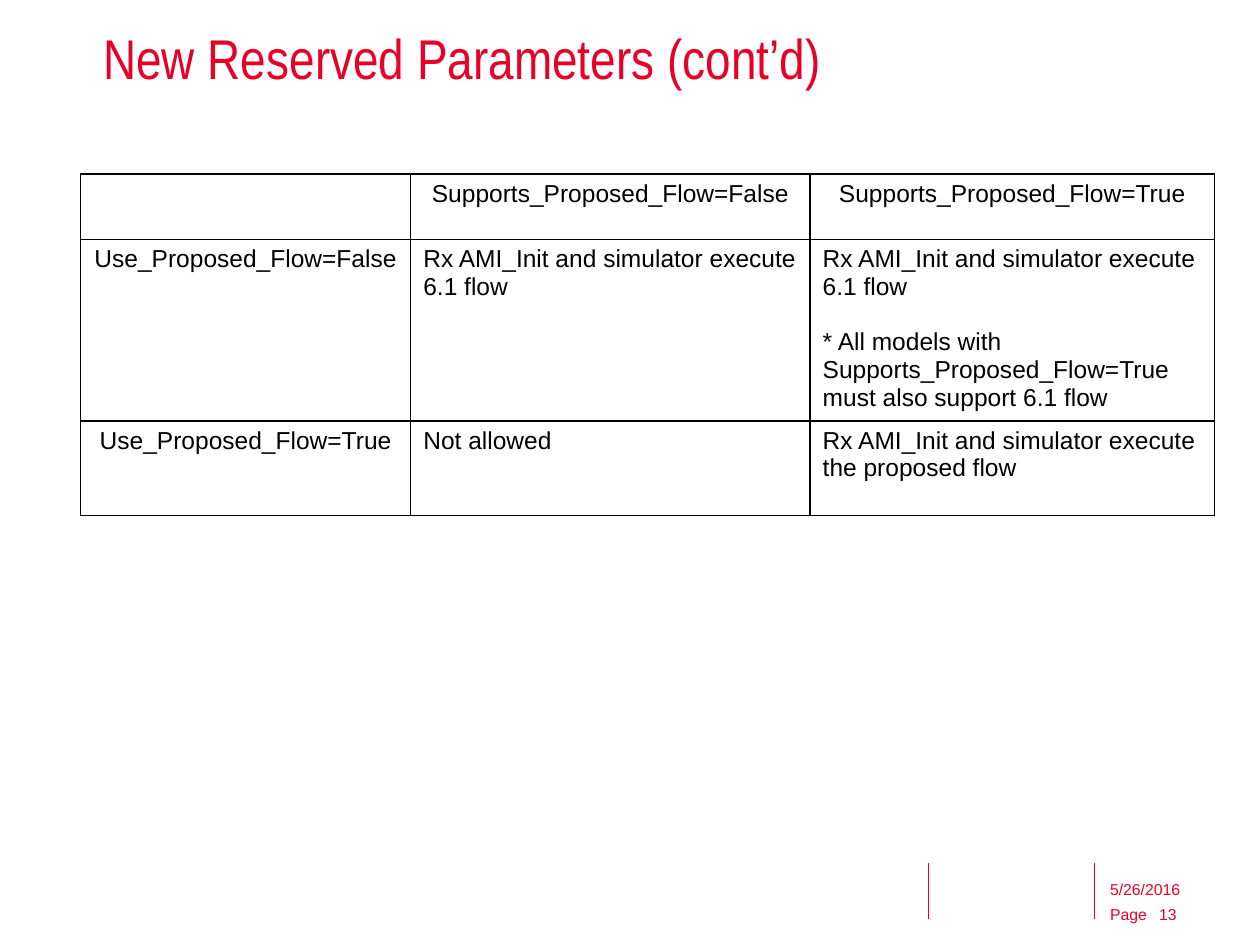
from lxml.etree import SubElement
from pptx import Presentation
from pptx.dml.color import RGBColor
from pptx.enum.shapes import MSO_CONNECTOR
from pptx.enum.text import MSO_ANCHOR, PP_ALIGN
from pptx.oxml import parse_xml
from pptx.oxml.ns import nsdecls, qn
from pptx.util import Inches, Pt

# Content
TITLE = "New Reserved Parameters (cont’d)"
FLOW_ROWS = [
    ["", "Supports_Proposed_Flow=False", "Supports_Proposed_Flow=True"],
    ["Use_Proposed_Flow=False",
     "Rx AMI_Init and simulator execute 6.1 flow",
     "Rx AMI_Init and simulator execute 6.1 flow\n"
     "* All models with Supports_Proposed_Flow=True must also support 6.1 flow"],
    ["Use_Proposed_Flow=True", "Not allowed",
     "Rx AMI_Init and simulator execute the proposed flow"],
]
# Text, left, top, width, height, line spacing
FOOTER = [
    ("Page", 8.81, 7.1, 0.38, 0.23, 1.1),
    ("13", 9.2, 7.1, 0.3, 0.23, 1.1),
    ("5/26/2016", 8.81, 6.73, 1.19, 0.4, 1.0),
]

# Layout and style
COLORS = {"accent": "E90029", "ink": "000000"}
COLUMN_WIDTHS = [2.62, 3.17, 3.21]
ROW_HEIGHTS = [0.52, 1.41, 0.75]
RULE_LEFTS = [7.37, 8.69]
RULE_TOP, RULE_BOTTOM = 6.85, 7.29


def style_font(paragraph, size, color, face="Arial"):
    for run in paragraph.runs:
        run.font.size = Pt(size)
        run.font.name = face
        run.font.color.rgb = RGBColor.from_string(COLORS[color])


def set_frame(frame):
    frame.margin_left = frame.margin_right = 0
    frame.margin_top = frame.margin_bottom = 0
    frame.vertical_anchor = MSO_ANCHOR.BOTTOM
    frame.word_wrap = True


def add_borders(cell):
    properties = cell._tc.get_or_add_tcPr()
    for index, side in enumerate(("lnL", "lnR", "lnT", "lnB")):
        properties.insert(index, parse_xml(
            f'<a:{side} {nsdecls("a")} w="{Pt(1)}"><a:solidFill>'
            f'<a:srgbClr val="{COLORS["ink"]}"/></a:solidFill></a:{side}>'))


deck = Presentation()
deck.slide_width, deck.slide_height = Inches(10), Inches(7.5)
slide = deck.slides.add_slide(deck.slide_layouts[5])

# Footer rules
for left in RULE_LEFTS:
    rule = slide.shapes.add_connector(
        MSO_CONNECTOR.STRAIGHT, Inches(left), Inches(RULE_TOP),
        Inches(left), Inches(RULE_BOTTOM))
    rule.line.color.rgb = RGBColor.from_string(COLORS["accent"])
    rule.line.width = Pt(0.5)
    SubElement(rule._element.spPr, qn("a:effectLst"))

# Footer date and page number
for text, left, top, width, height, spacing in FOOTER:
    note = slide.shapes.add_textbox(
        Inches(left), Inches(top), Inches(width), Inches(height))
    set_frame(note.text_frame)
    paragraph = note.text_frame.paragraphs[0]
    paragraph.text = text
    paragraph.line_spacing = spacing
    style_font(paragraph, 9, "accent")

# Title
title = slide.shapes.title
title.left, title.top = Inches(0.82), Inches(0.17)
title.width, title.height = Inches(7.87), Inches(0.56)
title.text_frame.text = TITLE
set_frame(title.text_frame)
heading = title.text_frame.paragraphs[0]
heading.alignment = PP_ALIGN.LEFT
heading.line_spacing = 0.9
style_font(heading, 32, "accent", "Arial Narrow")

# Flow table
flow_table = slide.shapes.add_table(
    len(ROW_HEIGHTS), len(COLUMN_WIDTHS), Inches(0.64), Inches(1.38),
    Inches(sum(COLUMN_WIDTHS)), Inches(sum(ROW_HEIGHTS))).table
flow_table.first_row = flow_table.horz_banding = False
for column, width in zip(flow_table.columns, COLUMN_WIDTHS):
    column.width = Inches(width)
for row, height in zip(flow_table.rows, ROW_HEIGHTS):
    row.height = Inches(height)

for r, row_texts in enumerate(FLOW_ROWS):
    for c, text in enumerate(row_texts):
        cell = flow_table.cell(r, c)
        cell.text_frame.text = text
        cell.margin_bottom = 0
        cell.fill.background()
        add_borders(cell)
        is_header = r == 0 or c == 0
        for index, paragraph in enumerate(cell.text_frame.paragraphs):
            paragraph.alignment = PP_ALIGN.CENTER if is_header else PP_ALIGN.LEFT
            if index:
                paragraph.space_before = Pt(16)
            style_font(paragraph, 14, "ink")

deck.save("out.pptx")
